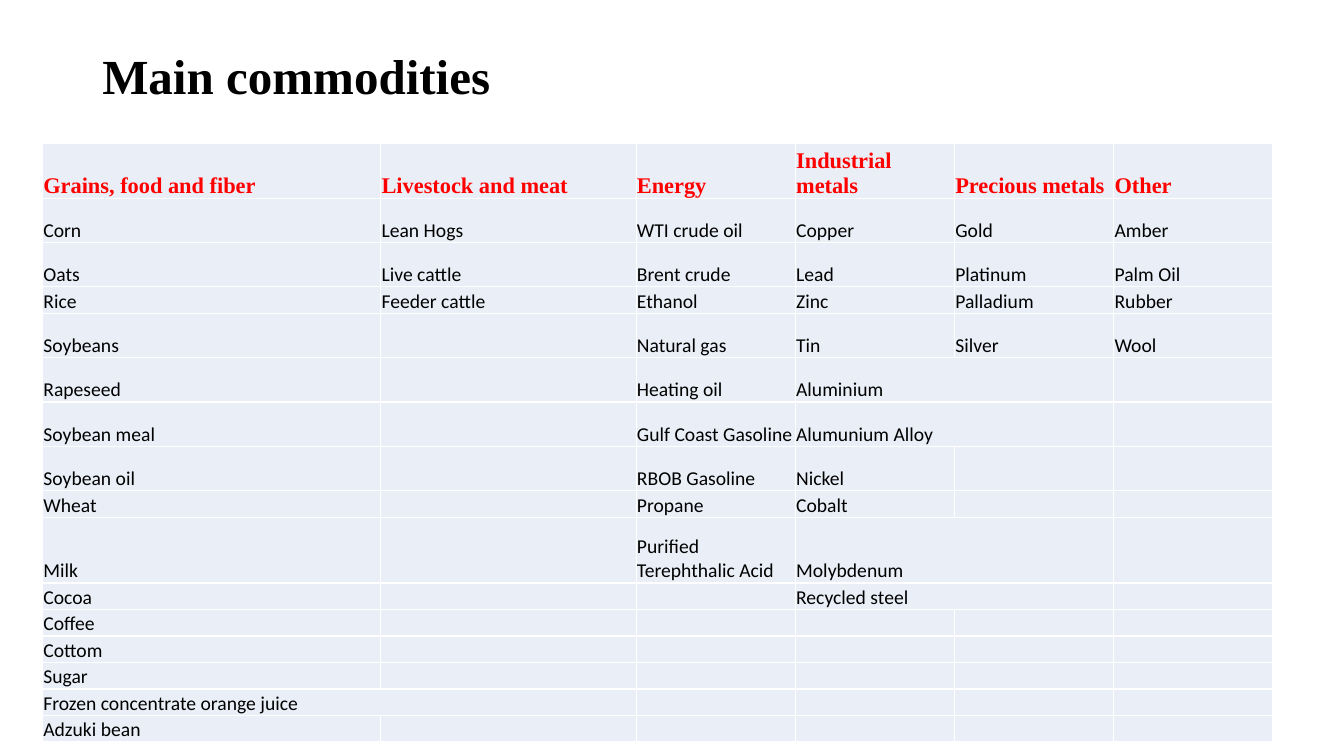
from lxml import etree
from pptx import Presentation
from pptx.dml.color import RGBColor
from pptx.enum.text import MSO_ANCHOR
from pptx.oxml.ns import qn
from pptx.util import Pt

BOTTOM = MSO_ANCHOR.BOTTOM
MIDDLE = MSO_ANCHOR.MIDDLE

COLORS = {"text": "000000", "header": "FF0000", "cell": "EAEFF7", "border": "FFFFFF"}
TITLE = "Main commodities"
COMMODITIES = {
    "Grains, food and fiber": [
        "Corn", "Oats", "Rice", "Soybeans", "Rapeseed", "Soybean meal",
        "Soybean oil", "Wheat", "Milk", "Cocoa", "Coffee", "Cottom", "Sugar",
        "Frozen concentrate orange juice", "Adzuki bean"],
    "Livestock and meat": ["Lean Hogs", "Live cattle", "Feeder cattle"],
    "Energy": [
        "WTI crude oil", "Brent crude", "Ethanol", "Natural gas", "Heating oil",
        "Gulf Coast Gasoline", "RBOB Gasoline", "Propane",
        "Purified Terephthalic Acid"],
    "Industrial metals": [
        "Copper", "Lead", "Zinc", "Tin", "Aluminium", "Alumunium Alloy",
        "Nickel", "Cobalt", "Molybdenum", "Recycled steel"],
    "Precious metals": ["Gold", "Platinum", "Palladium", "Silver"],
    "Other": ["Amber", "Palm Oil", "Rubber", "Wool"],
}
WIDE_ITEMS = {"Aluminium", "Alumunium Alloy", "Molybdenum", "Recycled steel",
              "Frozen concentrate orange juice"}
COL_WIDTHS = [241.6, 182.4] + [113.75] * 4
SHORT, TALL, DOUBLE = 18.95, 31.7, 46.9
ROW_HEIGHTS = [35.2, TALL, TALL, SHORT] + [TALL] * 4 + [SHORT, DOUBLE] + [SHORT] * 6
TABLE_LEFT, TABLE_TOP = 30.4, 102.5


def format_run(r, font, size, color, bold):
    r.font.name = font
    r.font.size = Pt(size)
    r.font.bold = bold
    r.font.color.rgb = RGBColor.from_string(COLORS[color])


def add_borders(cell):
    tc_pr = cell._tc.get_or_add_tcPr()
    for i, side in enumerate(("a:lnL", "a:lnR", "a:lnT", "a:lnB")):
        ln = etree.Element(qn(side), w=str(Pt(1)))
        fill = etree.SubElement(ln, qn("a:solidFill"))
        etree.SubElement(fill, qn("a:srgbClr"), val=COLORS["border"])
        tc_pr.insert(i, ln)


def fill_cell(cell, text, is_header):
    cell.fill.solid()
    cell.fill.fore_color.rgb = RGBColor.from_string(COLORS["cell"])
    cell.vertical_anchor = BOTTOM
    cell.margin_left = cell.margin_right = cell.margin_top = Pt(0.6)
    cell.margin_bottom = Pt(0)
    add_borders(cell)
    p = cell.text_frame.paragraphs[0]
    if not text:
        p._p.get_or_add_endParaRPr().set("sz", "1400")
        return
    p.text = text
    if is_header:
        format_run(p.runs[0], "Times New Roman", 16, "header", True)
    else:
        format_run(p.runs[0], "Calibri", 14, "text", False)


def add_title(slide):
    tf = slide.shapes.add_textbox(Pt(66), Pt(28.8), Pt(828), Pt(54.7)).text_frame
    tf.word_wrap = True
    tf.vertical_anchor = MIDDLE
    tf.text = TITLE
    p = tf.paragraphs[0]
    p.line_spacing = 0.9
    format_run(p.runs[0], "Times New Roman", 35, "text", True)


def add_commodity_table(slide):
    table = slide.shapes.add_table(
        len(ROW_HEIGHTS), len(COL_WIDTHS), Pt(TABLE_LEFT), Pt(TABLE_TOP),
        Pt(sum(COL_WIDTHS)), Pt(sum(ROW_HEIGHTS))).table
    table.first_row = table.horz_banding = False
    for row, height in zip(table.rows, ROW_HEIGHTS):
        row.height = Pt(height)
    for c, (group, items) in enumerate(COMMODITIES.items()):
        table.columns[c].width = Pt(COL_WIDTHS[c])
        column = [group] + items
        for r in range(len(ROW_HEIGHTS)):
            text = column[r] if r < len(column) else ""
            fill_cell(table.cell(r, c), text, r == 0)
            if text in WIDE_ITEMS:
                table.cell(r, c).merge(table.cell(r, c + 1))


def main():
    prs = Presentation()
    prs.slide_width, prs.slide_height = Pt(960), Pt(540)
    slide = prs.slides.add_slide(prs.slide_layouts[6])
    add_title(slide)
    add_commodity_table(slide)
    prs.save("out.pptx")


if __name__ == "__main__":
    main()
